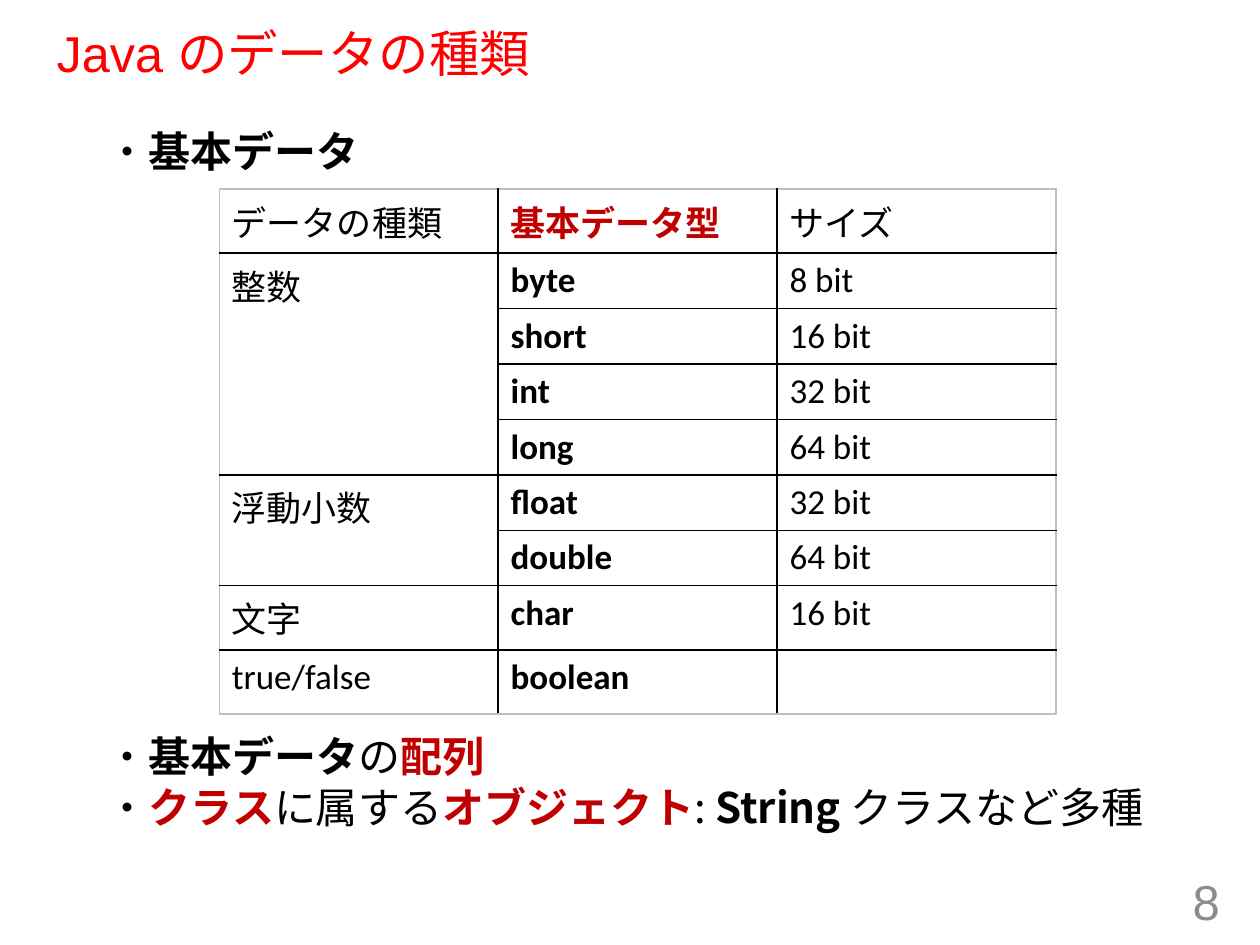
import pptx
import pptx.dml.color
import pptx.enum.text
import pptx.oxml
import pptx.oxml.ns
import pptx.util
from pptx.util import Inches

BLACK, RED, CRIMSON = "000000", "FF0000", "C00000"
GREY, PALE = "8C8C8C", "BFBFBF"
CJK = "Noto Sans CJK JP"
ALIGN = pptx.enum.text.PP_ALIGN
MIDDLE = pptx.enum.text.MSO_ANCHOR.MIDDLE
NO_FIT = pptx.enum.text.MSO_AUTO_SIZE.NONE

# (label, rows spanned) and (type, size)
KINDS = [("整数", 4), ("浮動小数", 2), ("文字", 1), ("true/false", 1)]
TYPES = [("byte", "8 bit"), ("short", "16 bit"), ("int", "32 bit"),
         ("long", "64 bit"), ("float", "32 bit"), ("double", "64 bit"),
         ("char", "16 bit"), ("boolean", "")]
ROW, TALL_ROW, TALL_ROWS = 0.44, 0.51, (0, 7, 8)

# Each line is a list of (text, bold, colour)
LINES = [
    [("・", False, BLACK), ("基本データ", True, BLACK)],
    [("・", False, BLACK), ("基本データ", True, BLACK),
     ("の", False, BLACK), ("配列", True, CRIMSON)],
    [("・", False, BLACK), ("クラス", True, CRIMSON),
     ("に属する", False, BLACK), ("オブジェクト", True, CRIMSON),
     (": ", False, BLACK), ("String ", True, BLACK),
     ("クラスなど多種", False, BLACK)],
]


def rgb(value):
    return pptx.dml.color.RGBColor.from_string(value)


def add_run(p, text, size, name, color, bold=False):
    r = p.add_run()
    r.text = text
    values = {"size": pptx.util.Pt(size), "name": name, "bold": bold}
    for key, value in values.items():
        setattr(r.font, key, value)
    r.font.color.rgb = rgb(color)
    ea = pptx.oxml.parse_xml(
        f'<a:ea {pptx.oxml.ns.nsdecls("a")} typeface="{CJK}"/>')
    r.font._element.find(pptx.oxml.ns.qn("a:latin")).addnext(ea)


def place(sp, box):
    for key, value in zip(("left", "top", "width", "height"), box):
        setattr(sp, key, Inches(value))


def add_title(s, box, text):
    sp = s.shapes.title
    place(sp, box)
    tf = sp.text_frame
    tf.auto_size, tf.vertical_anchor = NO_FIT, MIDDLE
    p = tf.paragraphs[0]
    p.alignment, p.line_spacing = ALIGN.LEFT, 0.9
    add_run(p, text, 28.8, "Arial", RED)


def add_page_number(s, box, number):
    tf = s.shapes.add_textbox(*map(Inches, box)).text_frame
    tf.word_wrap, tf.vertical_anchor = True, MIDDLE
    p = tf.paragraphs[0]
    p.alignment = ALIGN.RIGHT
    add_run(p, number, 28, "Arial", GREY)


def set_borders(cell, colors):
    """Colours come in the order left, right, top, bottom."""
    tc_pr = cell._tc.get_or_add_tcPr()
    for i, (side, color) in enumerate(zip("LRTB", colors)):
        tc_pr.insert(i, pptx.oxml.parse_xml(
            f'<a:ln{side} {pptx.oxml.ns.nsdecls("a")} w="12700"><a:solidFill>'
            f'<a:srgbClr val="{color}"/></a:solidFill></a:ln{side}>'))


def add_type_table(s, box):
    rows, cols = len(TYPES) + 1, 3
    table = s.shapes.add_table(rows, cols, *map(Inches, box)).table
    table.first_row = table.horz_banding = False
    for col in table.columns:
        col.width = Inches(box[2] / cols)
    for i, row in enumerate(table.rows):
        row.height = Inches(TALL_ROW if i in TALL_ROWS else ROW)

    for i in range(rows):
        for j in range(cols):
            cell = table.cell(i, j)
            cell.fill.background()
            outer = (j == 0, j == cols - 1, i == 0, i == rows - 1)
            set_borders(cell, [PALE if edge else BLACK for edge in outer])

    def write(i, j, text, color=BLACK):
        if text:
            p = table.cell(i, j).text_frame.paragraphs[0]
            add_run(p, text, 20, "Calibri", color, bold=j == 1)

    write(0, 0, "データの種類")
    write(0, 1, "基本データ型", CRIMSON)
    write(0, 2, "サイズ")
    for i, (name, size) in enumerate(TYPES, 1):
        write(i, 1, name)
        write(i, 2, size)
    i = 1
    for kind, span in KINDS:
        write(i, 0, kind)
        if span > 1:
            table.cell(i, 0).merge(table.cell(i + span - 1, 0))
        i += span


def add_points(s, box, pitch=28.8, table_lines=11):
    """Leave room for the table, counted in lines, after the first point."""
    tf = s.shapes.add_textbox(*map(Inches, box)).text_frame
    tf.word_wrap = False
    for i, line in enumerate(LINES):
        p = tf.paragraphs[0] if i == 0 else tf.add_paragraph()
        p.line_spacing = pptx.util.Pt(pitch)
        if i == 1:
            p.space_before = pptx.util.Pt(pitch * table_lines)
        for text, bold, color in line:
            add_run(p, text, 24, CJK, color, bold)


def main():
    prs = pptx.Presentation()
    prs.slide_width, prs.slide_height = Inches(10), Inches(7.5)
    s = prs.slides.add_slide(prs.slide_layouts[5])
    add_title(s, (0.35, 0.19, 9.25, 0.51), "Java のデータの種類")
    add_page_number(s, (7.53, 6.95, 2.25, 0.4), "8")
    add_type_table(s, (1.74, 1.5, 6.64, 3.9))
    add_points(s, (0.75, 0.95, 8.73, 5.76))
    prs.save("out.pptx")


if __name__ == "__main__":
    main()
